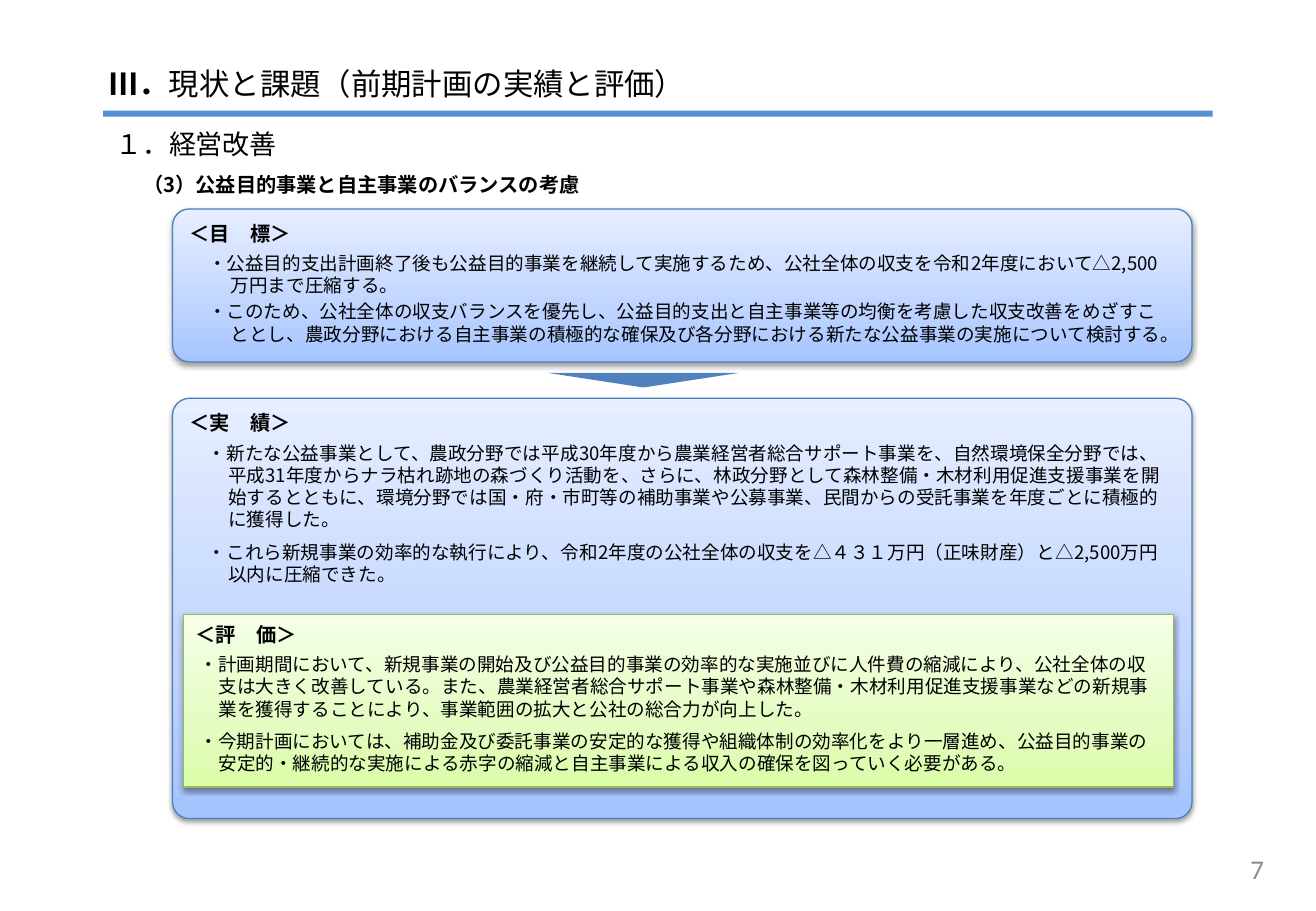
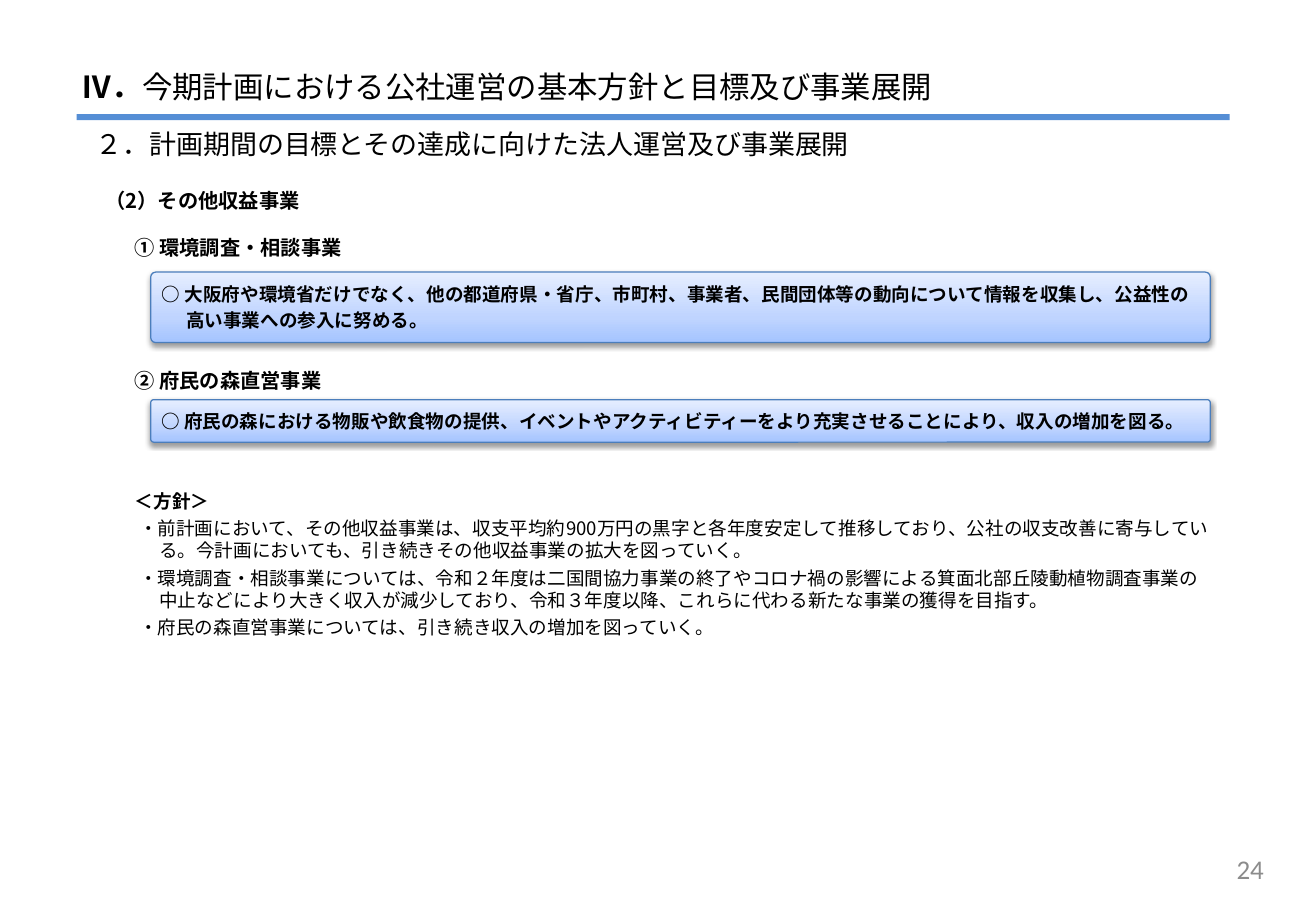
from copy import deepcopy
from pptx import Presentation
from pptx import util as u
from pptx.dml.color import RGBColor
from pptx.enum import lang, shapes, text
from pptx.oxml import ns, parse_xml

COLS, ROWS = 108.3, 75
CELL = u.Inches(0.1)
FACE, DIGIT = "Noto Sans CJK JP", "Calibri"
BLACK = RGBColor(0x00, 0x00, 0x00)
GREY = RGBColor(0x8C, 0x8C, 0x8C)
RULE = RGBColor(0x55, 0x8E, 0xD5)
ARROW = RGBColor(0x4F, 0x81, 0xBD)
BLUE = dict(line=RGBColor(0x4B, 0x7E, 0xBC), stops=(
    (0, RGBColor(0xA4, 0xC4, 0xFF)),
    (0.35, RGBColor(0xBF, 0xD4, 0xFF)),
    (1, RGBColor(0xE6, 0xEE, 0xFF))))
GREEN = dict(line=RGBColor(0x98, 0xB9, 0x55), stops=(
    (0, RGBColor(0xDA, 0xFD, 0xA7)),
    (0.35, RGBColor(0xE4, 0xFC, 0xC2)),
    (1, RGBColor(0xF5, 0xFF, 0xE7))))
KIND = shapes.MSO_SHAPE
LEFT, RIGHT = text.PP_ALIGN.LEFT, text.PP_ALIGN.RIGHT
TOP, MID = text.MSO_ANCHOR.TOP, text.MSO_ANCHOR.MIDDLE
SHADE = (
    f'<a:outerShdw {ns.nsdecls("a")} blurRad="39370" dist="20320" '
    'dir="5400000" rotWithShape="0"><a:srgbClr val="000000">'
    '<a:alpha val="38000"/></a:srgbClr></a:outerShdw>')


def style(thing, looks):
    for name, val in looks.items():
        setattr(thing, name, val)


def inner(box, x, y, w, h):
    return box[0] + x, box[1] + y, w, h


def size(box):
    return [int(n * CELL) for n in box]


def put(par, words, pts, bold=False, tone=BLACK, face=FACE):
    run = par.add_run()
    run.text = words
    style(run.font, dict(size=u.Pt(pts), bold=bold, name=face,
                         language_id=lang.MSO_LANGUAGE_ID.JAPANESE))
    run.font.color.rgb = tone
    far = run._r.get_or_add_rPr().makeelement(ns.qn("a:ea"), {"typeface": face})
    run._r.rPr.find(ns.qn("a:latin")).addnext(far)


def shape_par(par, pts, hang=0.0, gap=0, lead=1.2, align=LEFT):
    style(par, dict(alignment=align, space_before=u.Pt(gap),
                    line_spacing=u.Pt(round(pts * lead, 1))))
    props = par._p.get_or_add_pPr()
    props.set("marL", str(u.Inches(hang)))
    props.set("indent", str(-u.Inches(hang)))
    props.append(props.makeelement(ns.qn("a:buNone"), {}))


def setup(frame, anchor=TOP, pads=(0.1, 0.06, 0.1, 0.05)):
    style(frame, dict(word_wrap=True, vertical_anchor=anchor,
                      auto_size=text.MSO_AUTO_SIZE.NONE))
    for side, pad in zip(("left", "top", "right", "bottom"), pads):
        setattr(frame, "margin_" + side, u.Inches(pad))
    return frame


def fill_in(frame, items):
    for num, (words, pts, bold, looks) in enumerate(items):
        par = frame.add_paragraph() if num else frame.paragraphs[0]
        shape_par(par, pts, **looks)
        put(par, words, pts, bold)


def place(holder, box):
    style(holder, dict(zip(("left", "top", "width", "height"), size(box))))
    return holder.text_frame


def label(slide, box, words, pts=12, bold=True):
    frame = setup(slide.shapes.add_textbox(*size(box)).text_frame)
    fill_in(frame, [(words, pts, bold, {})])


def plain(slide, kind, box, tone):
    form = slide.shapes.add_shape(kind, *size(box))
    form.shadow.inherit = False
    form.fill.solid()
    form.fill.fore_color.rgb = tone
    form.line.fill.background()
    return form


def panel(slide, box, theme, items, curve=None, **pads):
    kind = KIND.RECTANGLE if curve is None else KIND.ROUNDED_RECTANGLE
    form = slide.shapes.add_shape(kind, *size(box))
    if curve is not None:
        form.adjustments[0] = curve
    form.fill.gradient()
    form.fill.gradient_angle = 90
    ramp = form._element.spPr.find(".//" + ns.qn("a:gsLst"))
    ramp.append(deepcopy(ramp[0]))
    for stop, (pos, tone) in zip(form.fill.gradient_stops, theme["stops"]):
        stop.position = pos
        stop.color.rgb = tone
    form.line.color.rgb = theme["line"]
    form.line.width = u.Pt(0.75)
    form.shadow.inherit = False
    form._element.spPr.find(ns.qn("a:effectLst")).append(parse_xml(SHADE))
    fill_in(setup(form.text_frame, **pads), items)


def page(deck, layout, bar, title, part, shift, num):
    slide = deck.slides.add_slide(deck.slide_layouts[layout])
    frame = place(slide.shapes.title, inner(bar, -0.6, -5, bar[2], 5.4))
    par = setup(frame, MID).paragraphs[0]
    shape_par(par, 18)
    mark, dot, rest = title.partition("．")
    put(par, mark + dot, 18, True)
    put(par, rest, 18)
    plain(slide, KIND.RECTANGLE, bar, RULE)
    label(slide, (bar[0] + shift, 9.9, 80, 3.7), part, 16, False)
    foot = slide.shapes.add_textbox(*size((COLS - 28.6, ROWS - 5.5, 25.3, 4)))
    par = setup(foot.text_frame, MID).paragraphs[0]
    shape_par(par, 16, align=RIGHT)
    put(par, num, 16, tone=GREY, face=DIGIT)
    return slide


def points(head, hang, first, then, gap):
    return [(head, 12, True, {}),
            (first, 11, False, dict(hang=hang, gap=4)),
            (then, 11, False, dict(hang=hang, gap=gap))]


def review(slide, box):
    panel(slide, inner(box, 0, 0, box[2], 12.6), BLUE, points(
        "＜目　標＞", 0.34,
        "　・公益目的支出計画終了後も公益目的事業を継続して実施するため、公社全体の収支を令和2年度において△2,500万円まで圧縮する。",
        "　・このため、公社全体の収支バランスを優先し、公益目的支出と自主事業等の均衡を考慮した収支改善をめざすこととし、農政分野における自主事業の積極的な確保及び各分野における新たな公益事業の実施について検討する。",
        2.2), 0.11)
    plain(slide, KIND.ISOSCELES_TRIANGLE,
          inner(box, 30.9, 13.5, 15.7, 1.2), ARROW).rotation = 180
    panel(slide, inner(box, 0, 15.6, box[2], 34.6), BLUE, points(
        "＜実　績＞", 0.32,
        "　・新たな公益事業として、農政分野では平成30年度から農業経営者総合サポート事業を、自然環境保全分野では、平成31年度からナラ枯れ跡地の森づくり活動を、さらに、林政分野として森林整備・木材利用促進支援事業を開始するとともに、環境分野では国・府・市町等の補助事業や公募事業、民間からの受託事業を年度ごとに積極的に獲得した。",
        "　・これら新規事業の効率的な執行により、令和2年度の公社全体の収支を△４３１万円（正味財産）と△2,500万円以内に圧縮できた。",
        6), 0.04)
    panel(slide, inner(box, 0.9, 33.4, box[2] - 2.4, 14.2), GREEN, points(
        "＜評　価＞", 0.19,
        " ・計画期間において、新規事業の開始及び公益目的事業の効率的な実施並びに人件費の縮減により、公社全体の収支は大きく改善している。また、農業経営者総合サポート事業や森林整備・木材利用促進支援事業などの新規事業を獲得することにより、事業範囲の拡大と公社の総合力が向上した。",
        " ・今期計画においては、補助金及び委託事業の安定的な獲得や組織体制の効率化をより一層進め、公益目的事業の安定的・継続的な実施による赤字の縮減と自主事業による収入の確保を図っていく必要がある。",
        6))


def project(slide, box, name, drop, aim):
    label(slide, inner(box, 0, 0, 63.9, 3), name)
    panel(slide, inner(box, 2.3, drop, 87.2, box[3] - drop), BLUE,
          [(aim, 11, True, dict(hang=0.2, lead=1.44))], 0.07,
          pads=(0.08, 0.04, 0.12, 0.05))


def policy(slide, box):
    looks = dict(hang=0.2, gap=3)
    lines = (
        " ・前計画において、その他収益事業は、収支平均約900万円の黒字と各年度安定して推移しており、公社の収支改善に寄与している。今計画においても、引き続きその他収益事業の拡大を図っていく。",
        " ・環境調査・相談事業については、令和２年度は二国間協力事業の終了やコロナ禍の影響による箕面北部丘陵動植物調査事業の中止などにより大きく収入が減少しており、令和３年度以降、これらに代わる新たな事業の獲得を目指す。",
        " ・府民の森直営事業については、引き続き収入の増加を図っていく。")
    fill_in(setup(place(slide.placeholders[1], box)),
            [("＜方針＞", 11, True, {})]
            + [(line, 11, False, looks) for line in lines])


def main():
    deck = Presentation()
    style(deck, dict(slide_width=int(COLS * CELL), slide_height=ROWS * CELL))

    past = page(deck, 5, (8.5, 9.1, 91.3, 0.5),
                "Ⅲ．現状と課題（前期計画の実績と評価）", "１．経営改善", 0, "7")
    label(past, (10.8, 13.6, 52.3, 3), "（3）公益目的事業と自主事業のバランスの考慮")
    review(past, (14.2, 17.2, 83.9, 50.2))

    plan = page(deck, 1, (6.3, 9.4, 94.9, 0.5),
                "Ⅳ．今期計画における公社運営の基本方針と目標及び事業展開",
                "２．計画期間の目標とその達成に向けた法人運営及び事業展開", 0.6, "24")
    label(plan, (7.7, 14.9, 63.9, 3), "（2）その他収益事業")
    project(plan, (10.1, 18.8, 89.5, 9.4), "① 環境調査・相談事業", 3.6,
            "○ 大阪府や環境省だけでなく、他の都道府県・省庁、市町村、事業者、民間団体等の動向について情報を収集し、公益性の高い事業への参入に努める。")
    project(plan, (10.1, 29.7, 89.5, 6.7), "② 府民の森直営事業", 3.2,
            "○ 府民の森における物販や飲食物の提供、イベントやアクティビティーをより充実させることにより、収入の増加を図る。")
    policy(plan, (10.1, 39.7, 91.1, 13.4))
    deck.save("out.pptx")


if __name__ == "__main__":
    main()
